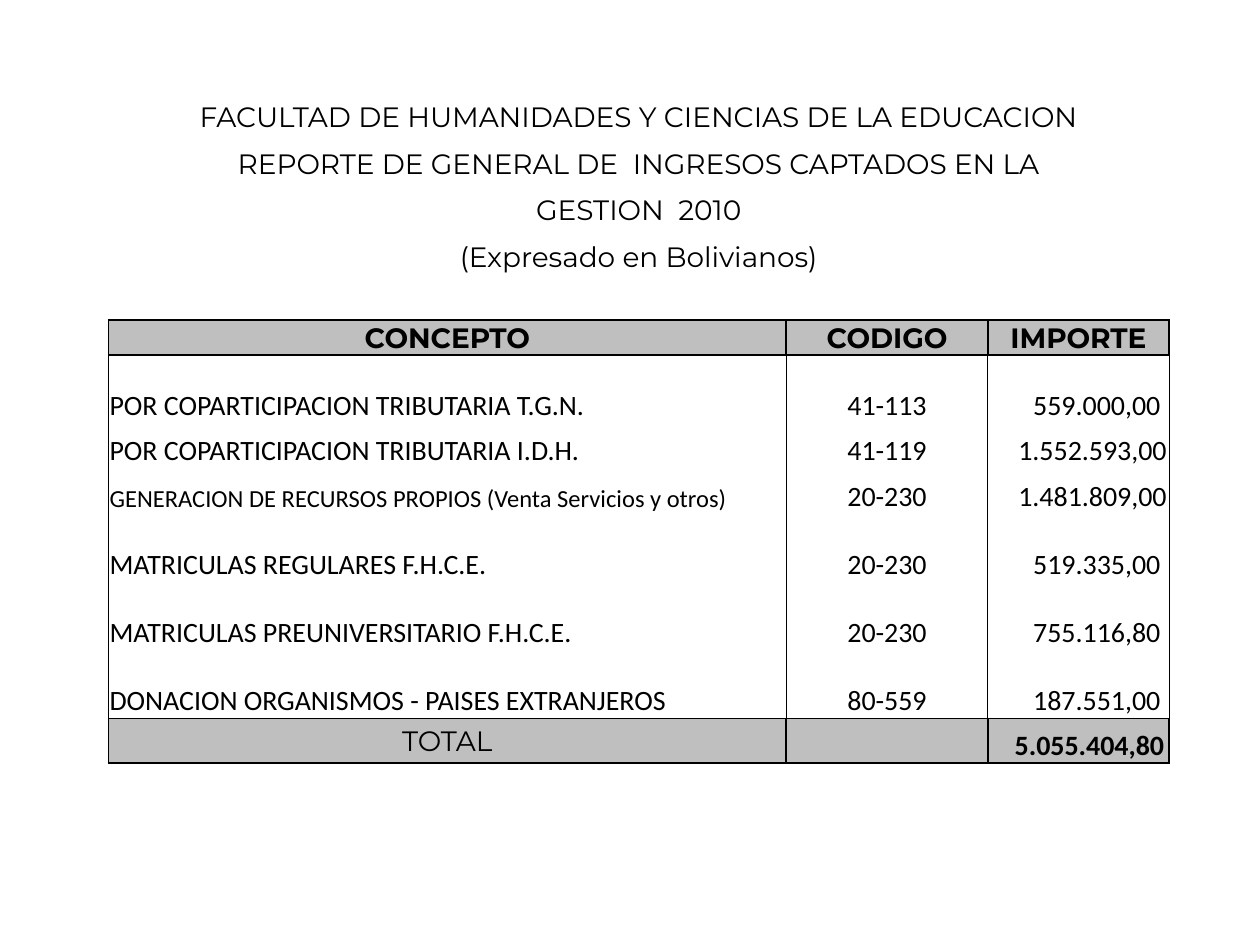
from lxml.etree import SubElement
from pptx import Presentation
from pptx.dml.color import RGBColor
from pptx.enum.text import MSO_ANCHOR, PP_ALIGN
from pptx.oxml.ns import qn
from pptx.util import Inches, Pt

BLACK, GREY = "000000", "BFBFBF"
COLUMN_WIDTHS = [5.38, 1.6, 1.44]
ROW_HEIGHTS = [0.37] * 4 + [0.36, 0.28, 0.54, 0.36, 0.36] + [0.54] * 3 + [0.36]
HEADER_ROW, TOTAL_ROW = 5, 12
TITLES = [
    "FACULTAD DE HUMANIDADES Y CIENCIAS DE LA EDUCACION",
    "REPORTE DE GENERAL DE  INGRESOS CAPTADOS EN LA",
    "GESTION  2010",
    "(Expresado en Bolivianos)",
]
HEADERS = ["CONCEPTO", "CODIGO", "IMPORTE"]
INCOMES = [
    ("POR COPARTICIPACION TRIBUTARIA T.G.N.", "41-113", "559.000,00", 16, 0.07),
    ("POR COPARTICIPACION TRIBUTARIA I.D.H.", "41-119", "1.552.593,00", 16, 0.02),
    ("GENERACION DE RECURSOS PROPIOS (Venta Servicios y otros)", "20-230",
     "1.481.809,00", 14, 0.02),
    ("MATRICULAS REGULARES F.H.C.E.", "20-230", "519.335,00", 16, 0.07),
    ("MATRICULAS PREUNIVERSITARIO F.H.C.E.", "20-230", "755.116,80", 16, 0.07),
    ("DONACION ORGANISMOS - PAISES EXTRANJEROS", "80-559", "187.551,00", 16, 0.07),
]


def color(value):
    """Turn a hex string into a colour."""
    return RGBColor.from_string(value)


def set_borders(cell, left=0, right=0, top=0, bottom=0):
    """Draw the cell's borders with widths in points, zero meaning none."""
    properties = cell._tc.get_or_add_tcPr()
    for side, width in zip("LRTB", (left, right, top, bottom)):
        line = SubElement(properties, qn(f"a:ln{side}"), w=str(Pt(width)))
        if width:
            fill = SubElement(line, qn("a:solidFill"))
            SubElement(fill, qn("a:srgbClr"), val=BLACK)
        else:
            SubElement(line, qn("a:noFill"))


def border_widths(row):
    """Give the border widths that belong to a table row."""
    if row < HEADER_ROW:
        return {"bottom": 1 if row == HEADER_ROW - 1 else 0}
    if row == HEADER_ROW:
        return dict(left=1, right=1, top=1, bottom=1)
    if row == TOTAL_ROW:
        return dict(left=1, right=1, top=0.5, bottom=1)
    return dict(left=0.5, right=0.5, top=1 if row == HEADER_ROW + 1 else 0,
                bottom=0.5 if row == TOTAL_ROW - 1 else 0)


def style_cell(cell, row):
    """Set margins, borders and fill for a cell of the given row."""
    cell.margin_left = cell.margin_right = cell.margin_top = Inches(0.01)
    cell.margin_bottom = 0
    set_borders(cell, **border_widths(row))
    if row in (HEADER_ROW, TOTAL_ROW):
        cell.fill.solid()
        cell.fill.fore_color.rgb = color(GREY)
    else:
        cell.fill.background()


def write_cell(cell, text, font="Calibri", size=16, bold=False,
               align=PP_ALIGN.CENTER, anchor=MSO_ANCHOR.BOTTOM, right_margin=0.01):
    """Write one line of formatted text in a cell."""
    cell.text_frame.text = text
    cell.vertical_anchor = anchor
    cell.margin_right = Inches(right_margin)
    paragraph = cell.text_frame.paragraphs[0]
    paragraph.alignment = align
    run_font = paragraph.runs[0].font
    run_font.name, run_font.size, run_font.bold = font, Pt(size), bold
    run_font.color.rgb = color(BLACK)


def add_grid(slide):
    """Add the empty table with its sizes, borders and fills."""
    shape = slide.shapes.add_table(
        len(ROW_HEIGHTS), len(COLUMN_WIDTHS), Inches(0.86), Inches(0.7),
        Inches(sum(COLUMN_WIDTHS)), Inches(sum(ROW_HEIGHTS)))
    table = shape.table
    table.first_row = table.horz_banding = False
    for column, width in zip(table.columns, COLUMN_WIDTHS):
        column.width = Inches(width)
    for index, height in enumerate(ROW_HEIGHTS):
        table.rows[index].height = Inches(height)
        for cell in table.rows[index].cells:
            style_cell(cell, index)
    return table


def write_titles(table):
    """Write the report titles across the full width."""
    for row, title in enumerate(TITLES):
        table.cell(row, 0).merge(table.cell(row, 2))
        write_cell(table.cell(row, 0), title, "Montserrat")


def write_incomes(table):
    """Write the header, the income rows and the total."""
    for column, header in enumerate(HEADERS):
        write_cell(table.cell(HEADER_ROW, column), header, "Montserrat",
                   bold=True, anchor=MSO_ANCHOR.MIDDLE)
    for row, income in enumerate(INCOMES, HEADER_ROW + 1):
        concept, code, amount, size, margin = income
        write_cell(table.cell(row, 0), concept, size=size, align=PP_ALIGN.LEFT)
        write_cell(table.cell(row, 1), code)
        write_cell(table.cell(row, 2), amount, align=PP_ALIGN.RIGHT,
                   right_margin=margin)
    write_cell(table.cell(TOTAL_ROW, 0), "TOTAL", "Montserrat",
               anchor=MSO_ANCHOR.MIDDLE)
    write_cell(table.cell(TOTAL_ROW, 2), "5.055.404,80", bold=True,
               align=PP_ALIGN.RIGHT, right_margin=0.04)


def main():
    """Build the income report slide."""
    presentation = Presentation()
    presentation.slide_width, presentation.slide_height = Inches(10), Inches(7.5)
    slide = presentation.slides.add_slide(presentation.slide_layouts[6])
    table = add_grid(slide)
    write_titles(table)
    write_incomes(table)
    presentation.save("out.pptx")


if __name__ == "__main__":
    main()
